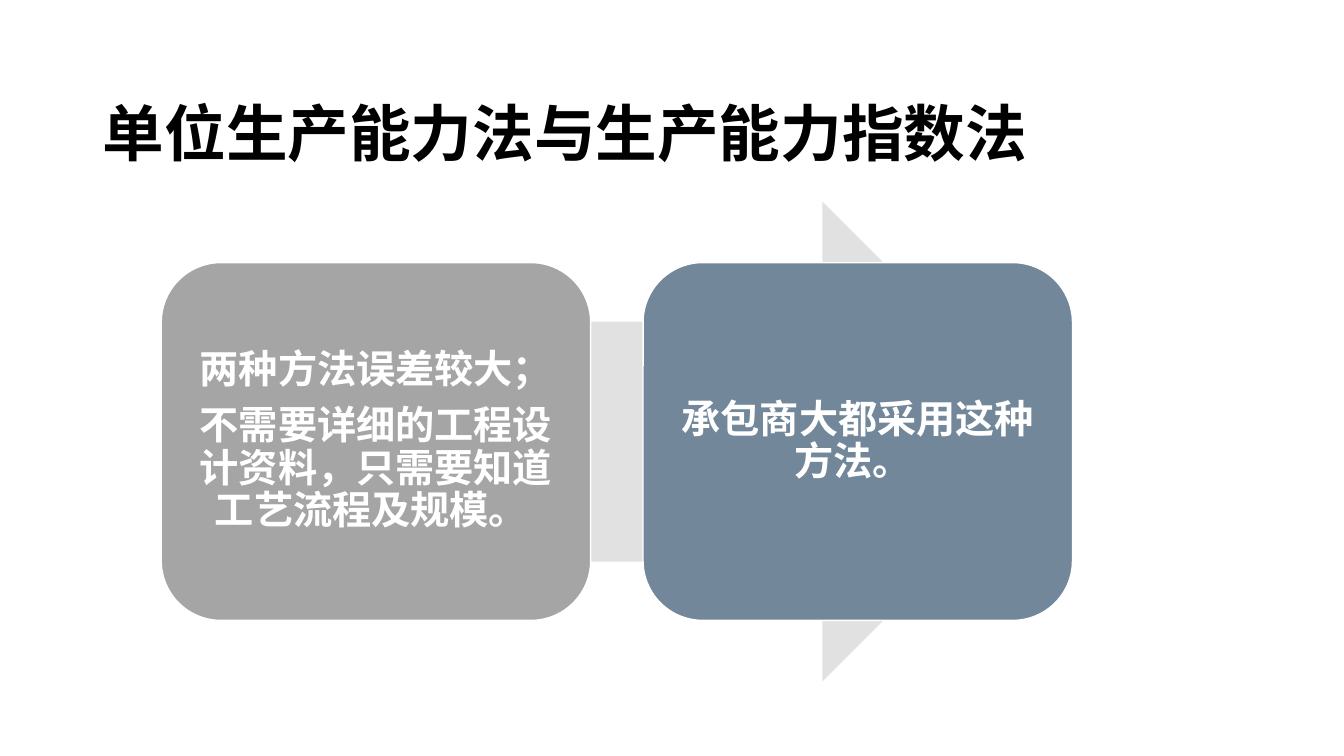
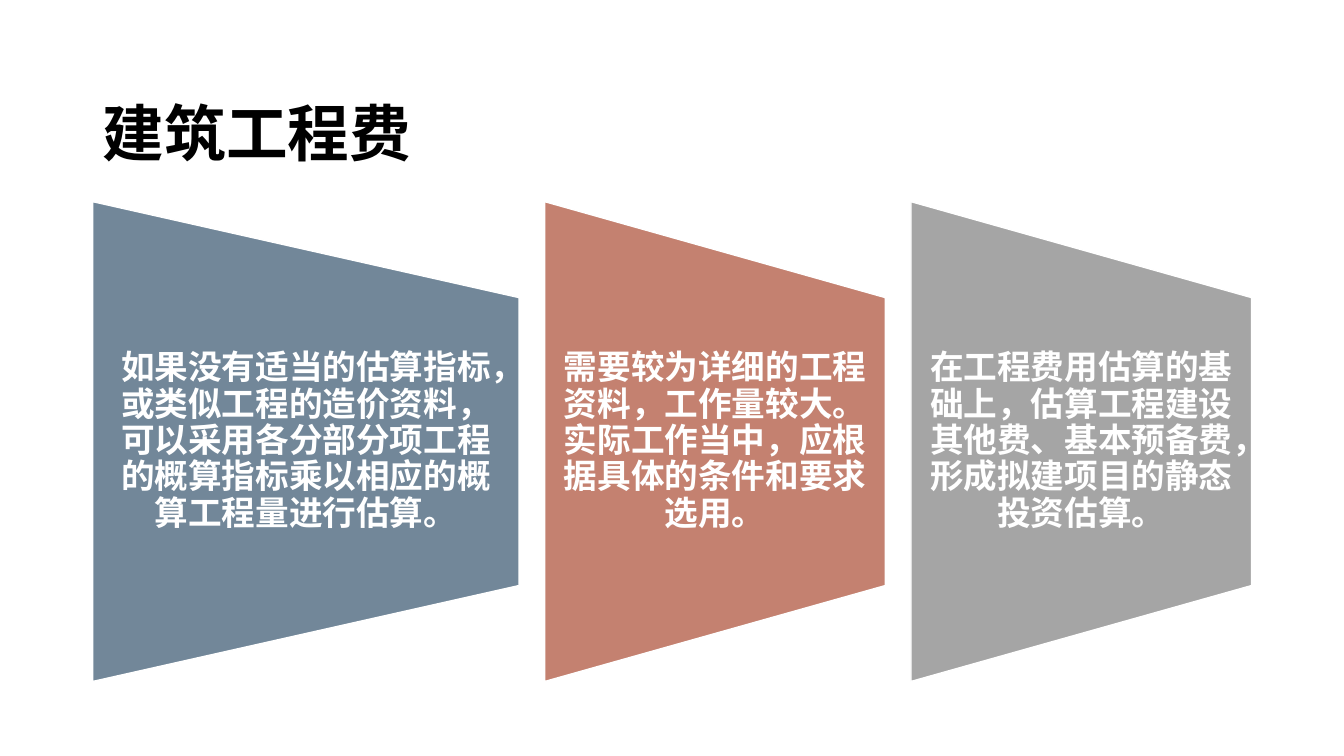
"""Builds two slides on cost estimating: method cards on an arrow and a row of trapezoid panels."""
from lxml.etree import SubElement
from pptx import Presentation
from pptx.dml.color import RGBColor
from pptx.enum.shapes import MSO_SHAPE
from pptx.enum.text import MSO_ANCHOR, MSO_AUTO_SIZE, PP_ALIGN
from pptx.oxml.ns import qn
from pptx.util import Inches, Pt

SLIDE_W, SLIDE_H = Inches(13.33), Inches(7.5)
COLORS = {
    "title": "000000",
    "white": "FFFFFF",
    "arrow": "E1E1E1",
    "gray": "A5A5A5",
    "blue": "728799",
    "red": "C48170",
}
TITLE_FONT, BODY_FONT = "Times New Roman", "Noto Sans CJK SC"
LEFT = 6.9
BODY_TOP, BODY_H = 26.67, 63.47


def rgb(name):
    return RGBColor.from_string(COLORS[name])


def box(x, y, w, h):
    """Turns percentages of the slide into left, top, width and height."""
    return (round(SLIDE_W * x / 100), round(SLIDE_H * y / 100),
            round(SLIDE_W * w / 100), round(SLIDE_H * h / 100))


def place(sp, bounds):
    sp.left, sp.top, sp.width, sp.height = bounds


def add_run(p, text, size, color, font):
    r = p.add_run()
    r.text = text
    r.font.size, r.font.bold, r.font.name = Pt(size), True, font
    r.font.color.rgb = rgb(color)
    SubElement(r.font._element, qn("a:ea")).set("typeface", BODY_FONT)


def add_slide(prs, title):
    s = prs.slides.add_slide(prs.slide_layouts[5])
    sp = s.shapes.title
    place(sp, box(LEFT, 5.33, 86.25, 19.33))
    tf = sp.text_frame
    tf.word_wrap, tf.auto_size = True, MSO_AUTO_SIZE.NONE
    tf.vertical_anchor = MSO_ANCHOR.MIDDLE
    p = tf.paragraphs[0]
    p.alignment, p.line_spacing = PP_ALIGN.JUSTIFY, 1.5
    add_run(p, title, 44, "title", TITLE_FONT)
    return s


def add_block(s, kind, bounds, fill, outlined=True):
    sp = s.shapes.add_shape(kind, *bounds)
    sp.shadow.inherit = False
    sp.fill.solid()
    sp.fill.fore_color.rgb = rgb(fill)
    if outlined:
        sp.line.color.rgb = rgb("white")
        sp.line.width = Pt(1)
    else:
        sp.line.fill.background()
    return sp


def add_text(s, bounds, paragraphs, size, inset_x, inset_y):
    tf = s.shapes.add_textbox(*bounds).text_frame
    tf.word_wrap, tf.vertical_anchor = True, MSO_ANCHOR.MIDDLE
    tf.margin_left = tf.margin_right = Inches(inset_x)
    tf.margin_top = tf.margin_bottom = Inches(inset_y)
    for i, text in enumerate(paragraphs):
        p = tf.add_paragraph() if i else tf.paragraphs[0]
        p.alignment, p.line_spacing = PP_ALIGN.CENTER, 0.9
        p.space_after = Pt(size * 0.35)
        add_run(p, text, size, "white", BODY_FONT)


def add_card(s, x, fill, paragraphs):
    w, h = 31.95, 47.33
    y = BODY_TOP + (BODY_H - h) / 2
    pad_x, pad_y = 1.3, 2.31
    add_block(s, MSO_SHAPE.ROUNDED_RECTANGLE, box(x, y, w, h), fill)
    inner = box(x + pad_x, y + pad_y, w - 2 * pad_x, h - 2 * pad_y)
    add_text(s, inner, paragraphs, 28, 0.12, 0.12)


def add_panel(s, x, w, fill, text):
    """Adds a trapezoid turned on its side, with upright text over it."""
    left, top, width, height = box(x, BODY_TOP, w, BODY_H)
    shift = (height - width) // 2
    turned = (left - shift, top + shift, height, width)
    sp = add_block(s, MSO_SHAPE.FLOWCHART_MANUAL_OPERATION, turned, fill)
    sp.rotation = 270
    middle = box(x, BODY_TOP + BODY_H / 5, w, BODY_H * 3 / 5)
    add_text(s, middle, [text], 24, 0.17, 0)


def build_methods(prs):
    s = add_slide(prs, "单位生产能力法与生产能力指数法")
    add_block(s, MSO_SHAPE.RIGHT_ARROW, box(12.75, BODY_TOP, 66.3, BODY_H),
              "arrow", outlined=False)
    cards = [
        ("gray", ["两种方法误差较大；",
                  "不需要详细的工程设计资料，只需要知道工艺流程及规模。 "]),
        ("blue", ["承包商大都采用这种方法。 "]),
    ]
    for i, (fill, paragraphs) in enumerate(cards):
        add_card(s, 12 + i * 35.85, fill, paragraphs)


def build_costs(prs):
    s = add_slide(prs, "建筑工程费")
    panels = [
        (31.73, "blue", "如果没有适当的估算指标，或类似工程的造价资料，"
                        "可以采用各分部分项工程的概算指标乘以相应的概算工程量进行估算。"),
        (25.35, "red", "需要较为详细的工程资料，工作量较大。"
                       "实际工作当中，应根据具体的条件和要求选用。"),
        (25.35, "gray", "在工程费用估算的基础上，估算工程建设其他费、基本预备费，"
                        "形成拟建项目的静态投资估算。"),
    ]
    x, gap = LEFT, 1.9
    for w, fill, text in panels:
        add_panel(s, x, w, fill, text)
        x += w + gap


def main():
    prs = Presentation()
    prs.slide_width, prs.slide_height = SLIDE_W, SLIDE_H
    build_methods(prs)
    build_costs(prs)
    prs.save("out.pptx")


if __name__ == "__main__":
    main()
